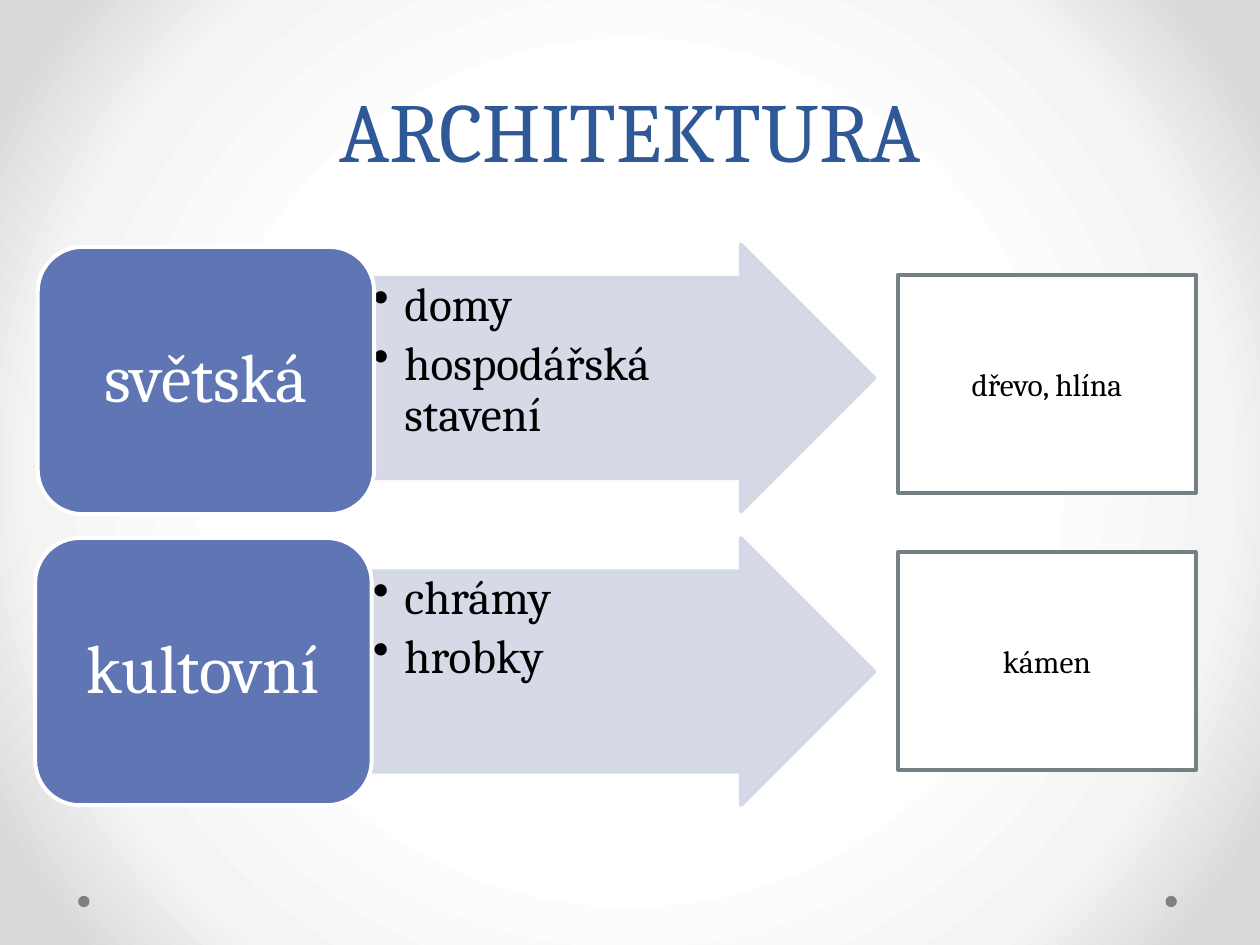
from dataclasses import dataclass
from typing import Any

from lxml.etree import SubElement
from pptx import Presentation
from pptx.dml.color import RGBColor
from pptx.enum.shapes import MSO_SHAPE
from pptx.enum.text import MSO_ANCHOR, PP_ALIGN
from pptx.oxml import parse_xml
from pptx.oxml.ns import nsdecls, qn
from pptx.util import Emu, Inches, Pt


@dataclass(frozen=True)
class Theme:
    """Colours, type sizes and line weight of the deck."""
    font: str = "Cambria"
    title: str = "2F5897"
    block: str = "6076B4"
    arrow: str = "D2D6E5"
    frame: str = "758085"
    dot: str = "808080"
    light: str = "FFFFFF"
    dark: str = "000000"
    backdrop: tuple = ((50, "FFFFFF"), (76, "F4F4F4"), (92, "DADADA"))
    title_size: int = 48
    block_size: int = 39
    example_size: int = 27
    material_size: int = 18
    outline: float = 2.25


@dataclass(frozen=True)
class Area:
    """Place on a grid of 100 columns and 75 rows."""
    col: float
    row: float
    cols: float
    rows: float


@dataclass(frozen=True)
class Branch:
    """One kind of architecture with its examples and material."""
    kind: str
    examples: tuple[str, ...]
    material: str
    block: Area
    arrow: Area
    frame: Area


THEME = Theme()
WIDTH, HEIGHT = Inches(10), Inches(7.5)
COLUMN, ROW = WIDTH / 100, HEIGHT / 75
BRANCHES = (
    Branch("světská", ("domy", "hospodářská stavení"), "dřevo, hlína",
           Area(3, 19.6, 26.7, 21.2), Area(29.4, 19.4, 40, 21.2), Area(71.3, 21.8, 23.6, 17.3)),
    Branch("kultovní", ("chrámy", "hrobky"), "kámen",
           Area(2.8, 42.7, 26.7, 21.2), Area(29.4, 42.7, 40, 21.2), Area(71.3, 43.8, 23.6, 17.3)),
)
DOTS = (Area(92.5, 71.1, 0.9, 0.9), Area(6.2, 71.1, 0.9, 0.9))
TITLE_AREA = Area(5, 0, 90, 14.7)
BLOCK_FRAME = dict(word_wrap=True, vertical_anchor=MSO_ANCHOR.MIDDLE,
                   margin_left=Inches(0.16), margin_right=Inches(0.16),
                   margin_top=Inches(0.08), margin_bottom=Inches(0.08))
EXAMPLE_FRAME = dict(word_wrap=True, vertical_anchor=MSO_ANCHOR.TOP,
                     margin_left=Inches(0.02), margin_right=Inches(0.54),
                     margin_top=Inches(0.02), margin_bottom=Inches(0.02))
MATERIAL_FRAME = dict(word_wrap=True, vertical_anchor=MSO_ANCHOR.MIDDLE)
TITLE_FRAME = dict(word_wrap=True, vertical_anchor=MSO_ANCHOR.BOTTOM)


def apply(target: Any, values: dict) -> None:
    """Set every format value on the target."""
    for name, value in values.items():
        setattr(target, name, value)


def bounds(area: Area) -> dict:
    """Turn a grid area into slide lengths."""
    return dict(left=Emu(round(area.col * COLUMN)), top=Emu(round(area.row * ROW)),
                width=Emu(round(area.cols * COLUMN)), height=Emu(round(area.rows * ROW)))


def draw(slide: Any, kind: MSO_SHAPE, area: Area, fill: str, line: str | None = None) -> Any:
    """Draw a flat preset shape."""
    shape = slide.shapes.add_shape(kind, **bounds(area))
    shape.shadow.inherit = False
    shape.fill.solid()
    shape.fill.fore_color.rgb = RGBColor.from_string(fill)
    if line:
        shape.line.color.rgb = RGBColor.from_string(line)
        shape.line.width = Pt(THEME.outline)
    else:
        shape.line.fill.background()
    return shape


def write(shape: Any, lines: tuple[str, ...], size: int, color: str,
          frame: dict, paragraph_format: dict) -> None:
    """Write formatted paragraphs into a shape."""
    apply(shape.text_frame, frame)
    shape.text_frame.text = "\n".join(lines)
    for paragraph in shape.text_frame.paragraphs:
        apply(paragraph, paragraph_format)
        font = paragraph.runs[0].font
        apply(font, dict(name=THEME.font, size=Pt(size)))
        font.color.rgb = RGBColor.from_string(color)


def add_bullets(shape: Any) -> None:
    """Give each paragraph a hanging bullet."""
    for paragraph in shape.text_frame.paragraphs:
        properties = paragraph._p.get_or_add_pPr()
        properties.set("marL", str(Inches(0.25)))
        properties.set("indent", str(-Inches(0.25)))
        SubElement(properties, qn("a:buChar"), char="•")


def soften(shape: Any, percent: int) -> None:
    """Make fill and line slightly transparent."""
    for color in shape.element.spPr.iter(qn("a:srgbClr")):
        SubElement(color, qn("a:alpha"), val=str(percent * 1000))


def paint_background(slide: Any) -> None:
    """Fill the background with a circular gradient."""
    slide.background.fill.solid()
    stops = "".join(f'<a:gs pos="{place * 1000}"><a:srgbClr val="{color}"/></a:gs>'
                    for place, color in THEME.backdrop)
    gradient = parse_xml(
        f'<a:gradFill {nsdecls("a")} rotWithShape="1"><a:gsLst>{stops}</a:gsLst>'
        '<a:path path="circle"><a:fillToRect l="50000" t="50000" r="50000" b="50000"/>'
        '</a:path></a:gradFill>')
    solid = next(slide.element.iter(qn("a:solidFill")))
    solid.getparent().replace(solid, gradient)


def draw_branch(slide: Any, branch: Branch) -> None:
    """Draw the arrow, block and material frame of a branch."""
    arrow = draw(slide, MSO_SHAPE.RIGHT_ARROW, branch.arrow, THEME.arrow, THEME.arrow)
    arrow.adjustments[0], arrow.adjustments[1] = 0.75, 0.5
    soften(arrow, 90)
    write(arrow, branch.examples, THEME.example_size, THEME.dark, EXAMPLE_FRAME,
          dict(alignment=PP_ALIGN.LEFT, line_spacing=0.9, space_after=Pt(4.5), level=1))
    add_bullets(arrow)
    block = draw(slide, MSO_SHAPE.ROUNDED_RECTANGLE, branch.block, THEME.block, THEME.light)
    write(block, (branch.kind,), THEME.block_size, THEME.light, BLOCK_FRAME,
          dict(alignment=PP_ALIGN.CENTER, line_spacing=0.9))
    frame = draw(slide, MSO_SHAPE.RECTANGLE, branch.frame, THEME.light, THEME.frame)
    write(frame, (branch.material,), THEME.material_size, THEME.dark, MATERIAL_FRAME,
          dict(alignment=PP_ALIGN.CENTER))


def main() -> None:
    """Build and save the slide."""
    deck = Presentation()
    apply(deck, dict(slide_width=WIDTH, slide_height=HEIGHT))
    slide = deck.slides.add_slide(deck.slide_layouts.get_by_name("Title Only"))
    paint_background(slide)
    title = slide.shapes.title
    apply(title, bounds(TITLE_AREA))
    write(title, ("ARCHITEKTURA",), THEME.title_size, THEME.title, TITLE_FRAME,
          dict(alignment=PP_ALIGN.CENTER, line_spacing=Pt(58)))
    for dot in DOTS:
        draw(slide, MSO_SHAPE.OVAL, dot, THEME.dot)
    for branch in BRANCHES:
        draw_branch(slide, branch)
    deck.save("out.pptx")


if __name__ == "__main__":
    main()
